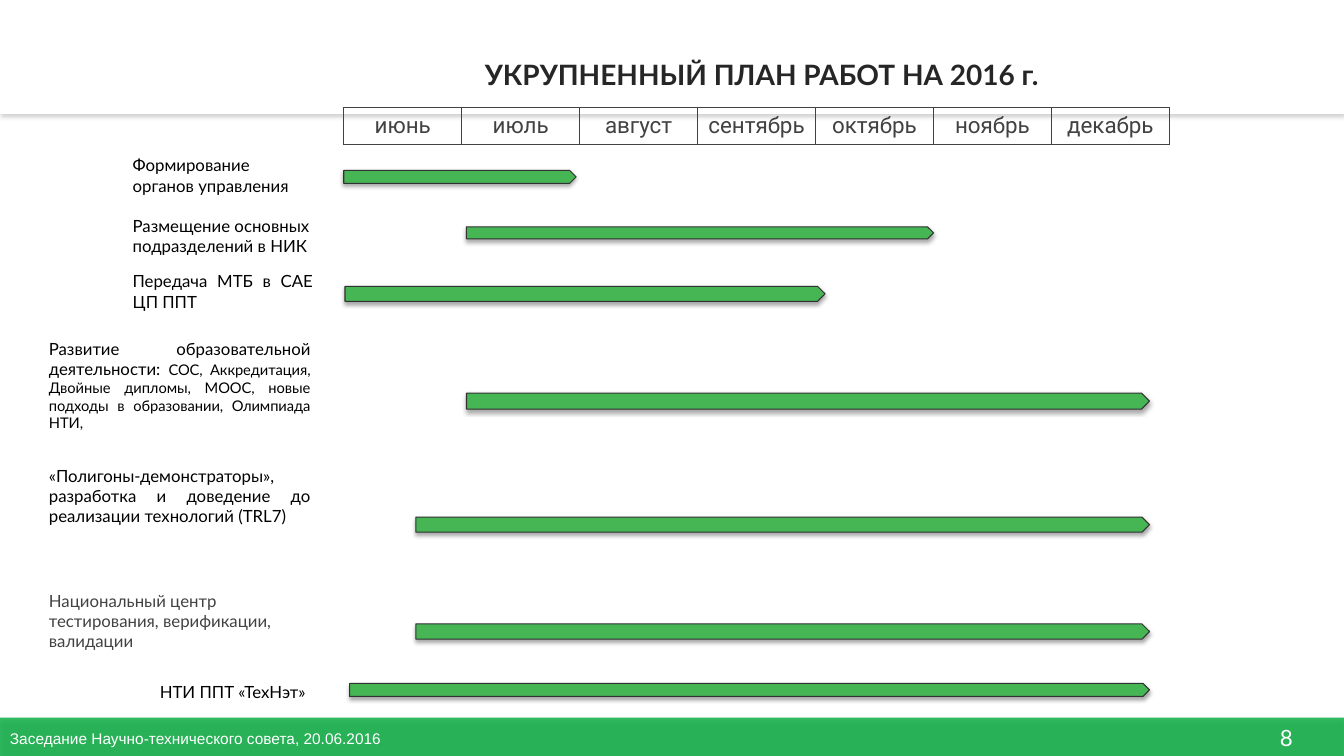
from lxml import etree
from pptx import Presentation
from pptx.dml.color import RGBColor
from pptx.enum.shapes import MSO_SHAPE
from pptx.enum.text import MSO_ANCHOR, PP_ALIGN
from pptx.oxml.ns import qn
from pptx.util import Emu, Inches, Pt

RECT, ARROW = MSO_SHAPE.RECTANGLE, MSO_SHAPE.PENTAGON
LEFT, CENTER, FILL = PP_ALIGN.LEFT, PP_ALIGN.CENTER, PP_ALIGN.JUSTIFY
TOP, MIDDLE, BOTTOM = MSO_ANCHOR.TOP, MSO_ANCHOR.MIDDLE, MSO_ANCHOR.BOTTOM

WHITE = RGBColor(0xFF, 0xFF, 0xFF)
BLACK = RGBColor(0x00, 0x00, 0x00)
INK = RGBColor(0x26, 0x26, 0x26)
GREY = RGBColor(0x42, 0x42, 0x42)
EDGE = RGBColor(0x32, 0x32, 0x32)
SHADE = RGBColor(0x80, 0x80, 0x80)
GREEN = RGBColor(0x46, 0xB6, 0x54)
BAND = RGBColor(0x13, 0xB1, 0x4A)

# Grid: one column is a month, counted from the start of June
START, COL, ROW = 3.41, 1.17, 0.5
WIDTH, HEIGHT = 13.33, 7.5
EDGE_COL, FULL = -START / COL, WIDTH / COL

MONTHS = ["июнь", "июль", "август", "сентябрь", "октябрь", "ноябрь", "декабрь"]

# Label: column, row, columns, rows, alignment, colour, runs; bar: from, to, row, rows
TASKS = [
    ((-1.85, 3.08, 1.59, 0.94, FILL, BLACK, [("Формирование органов управления", 12)]),
     (0, 1.97, 3.38, 0.26)),
    ((-1.85, 4.28, 2.03, 0.94, LEFT, BLACK, [("Размещение основных подразделений в НИК", 12)]),
     (1.04, 5, 4.5, 0.24)),
    ((-1.85, 5.38, 1.59, 0.94, FILL, BLACK, [("Передача МТБ в САЕ ЦП ППТ", 12)]),
     (0.01, 4.08, 5.68, 0.3)),
    ((-2.56, 6.72, 2.28, 2.62, FILL, BLACK,
      [("Развитие образовательной деятельности: ", 12),
       ("СОС, Аккредитация, Двойные дипломы, МООС, новые подходы в образовании, "
        "Олимпиада НТИ, ", 10.5)]),
     (1.04, 6.83, 7.8, 0.32)),
    ((-2.56, 9.24, 2.28, 2.04, FILL, BLACK,
      [("«Полигоны-демонстраторы», разработка и доведение до реализации "
        "технологий (TRL7)", 12)]),
     (0.61, 6.83, 10.26, 0.3)),
    ((-2.56, 11.72, 2.3, 1.4, LEFT, GREY,
      [("Национальный центр тестирования, верификации, валидации", 12)]),
     (0.61, 6.83, 12.38, 0.3)),
    ((-1.62, 13.52, 2.94, 0.48, FILL, BLACK, [("НТИ ППТ «ТехНэт»", 12)]),
     (0.05, 6.83, 13.56, 0.26)),
]


class Plan:
    """Style and current slide of the work plan."""

    def __init__(self, slide):
        self.slide = slide
        self.shapes = slide.shapes

    def place(self, col, row, cols, rows):
        return [Emu(Inches(v)) for v in
                (START + col * COL, row * ROW, cols * COL, rows * ROW)]

    def font(self, para, size, color, name="Lato", bold=False):
        para.font.name, para.font.bold = name, bold
        para.font.color.rgb = color
        if size:
            para.font.size = Pt(size)

    def shade(self, shape, color):
        effects = etree.SubElement(shape._element.spPr, qn("a:effectLst"))
        outer = etree.SubElement(effects, qn("a:outerShdw"), blurRad=str(Pt(3.1)),
                                 dist=str(Pt(1.8)), dir="5400000", rotWithShape="0")
        tone = etree.SubElement(outer, qn("a:srgbClr"), val=str(color))
        etree.SubElement(tone, qn("a:alpha"), val="35000")

    def block(self, kind, spot, fill, shadow=BLACK, line=None, alpha=None):
        shape = self.shapes.add_shape(kind, *self.place(*spot))
        shape.fill.solid()
        shape.fill.fore_color.rgb = fill
        if alpha:
            tone = shape._element.spPr.find(qn("a:solidFill"))[0]
            etree.SubElement(tone, qn("a:alpha"), val=str(alpha * 1000))
        if line:
            shape.line.color.rgb = line
            shape.line.width = Pt(0.75)
        else:
            shape.line.fill.background()
        self.shade(shape, shadow)

    def bar(self, start, end, row, rows):
        self.block(ARROW, (start, row, end - start, rows), GREEN, line=EDGE)

    def title(self, text, spot):
        title = self.shapes.title
        self.shapes._spTree.append(title._element)
        title.left, title.top, title.width, title.height = self.place(*spot)
        frame = title.text_frame
        frame.text = text
        frame.word_wrap = True
        frame.vertical_anchor = BOTTOM
        frame.paragraphs[0].alignment = LEFT
        self.font(frame.paragraphs[0], 20, INK, bold=True)

    def text(self, spot, runs, color, align=LEFT, anchor=TOP, name="Lato"):
        frame = self.shapes.add_textbox(*self.place(*spot)).text_frame
        frame.word_wrap = True
        frame.vertical_anchor = anchor
        para = frame.paragraphs[0]
        para.alignment = align
        for words, size in runs:
            run = para.add_run()
            run.text = words
            run.font.size = Pt(size)
        self.font(para, None, color, name)
        return frame

    def label(self, col, row, cols, rows, align, color, runs):
        frame = self.text((col, row, cols, rows), runs, color, align)
        frame.margin_left = frame.margin_right = 0
        frame.margin_top = frame.margin_bottom = 0
        para = frame.paragraphs[0]
        para.space_after = Pt(6)
        props = para._p.get_or_add_pPr()
        props.set("marL", str(Inches(0.07)))
        props.set("indent", "0")

    def border(self, cell):
        props = cell._tc.get_or_add_tcPr()
        for spot, side in enumerate(("lnL", "lnR", "lnT", "lnB")):
            line = etree.Element(qn("a:" + side), w=str(Pt(1)))
            fill = etree.SubElement(line, qn("a:solidFill"))
            etree.SubElement(fill, qn("a:srgbClr"), val=str(GREY))
            props.insert(spot, line)

    def months(self, names, row, rows):
        spot = self.place(0, row, len(names), rows)
        table = self.shapes.add_table(1, len(names), *spot).table
        table.first_row = table.horz_banding = False
        for index, name in enumerate(names):
            table.columns[index].width = Inches(COL)
            cell = table.cell(0, index)
            cell.text = name
            cell.fill.background()
            cell.margin_left = cell.margin_right = Inches(0.05)
            para = cell.text_frame.paragraphs[0]
            para.alignment = CENTER
            self.font(para, 16, GREY, "Roboto")
            self.border(cell)


def main():
    deck = Presentation()
    deck.slide_width, deck.slide_height = Inches(WIDTH), Inches(HEIGHT)
    plan = Plan(deck.slides.add_slide(deck.slide_layouts[5]))

    # Footer and header bands
    plan.block(RECT, (EDGE_COL, 14.24, FULL, 0.76), BAND, alpha=86)
    plan.block(RECT, (EDGE_COL, 0.36, FULL, 1.9), WHITE, SHADE)
    plan.text((7.6, 14.26, 0.78, 0.74), [("8", 16)], WHITE, CENTER, MIDDLE)
    plan.text((EDGE_COL, 14.28, 10.62, 0.74),
              [("Заседание Научно-технического совета, 20.06.2016", 11)],
              WHITE, anchor=MIDDLE, name="Arial")

    # Title and month scale
    plan.title("УКРУПНЕННЫЙ ПЛАН РАБОТ НА 2016 г.", (1.11, -0.02, 5.73, 1.92))
    plan.months(MONTHS, 2.14, 0.72)

    # Tasks with their bars
    for label, bar in TASKS:
        plan.label(*label)
        plan.bar(*bar)

    deck.save("out.pptx")


if __name__ == "__main__":
    main()
